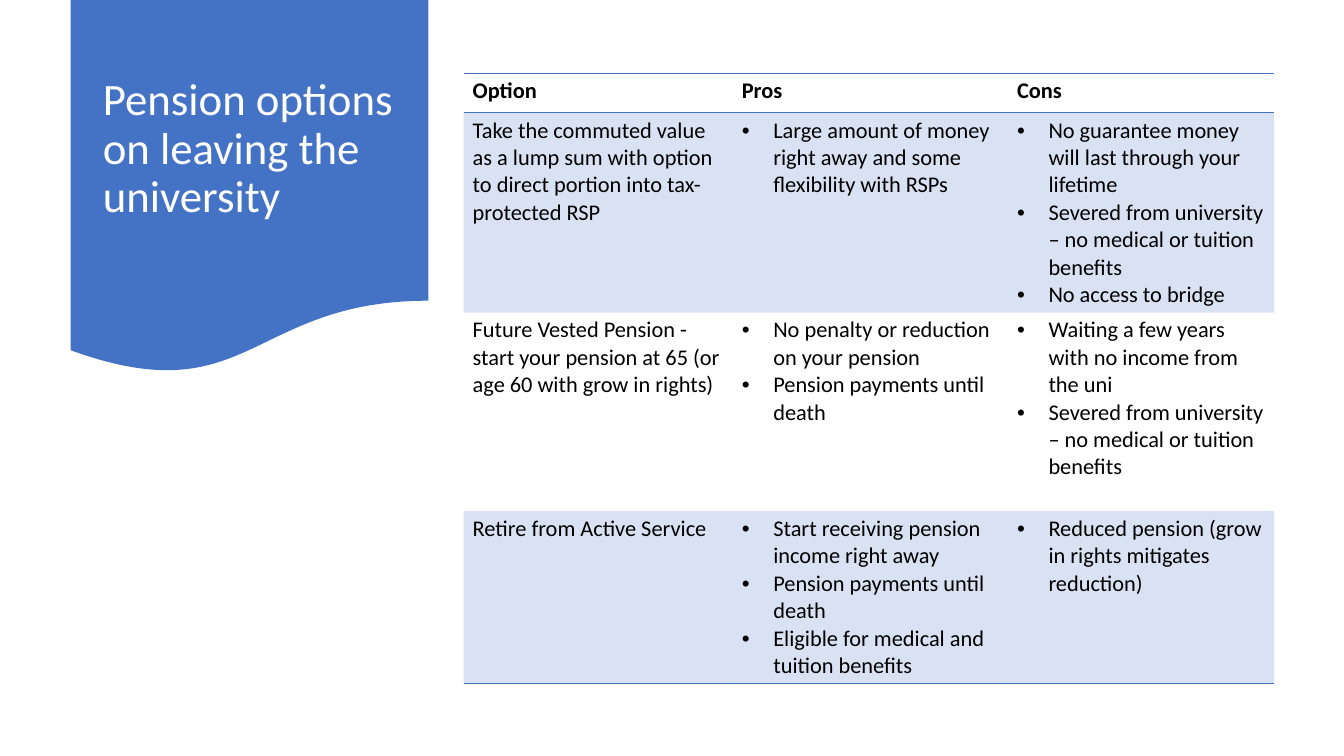
"""Build the slide on pension options when leaving the university."""
from lxml import etree
from pptx import Presentation
from pptx.dml.color import RGBColor
from pptx.enum.shapes import MSO_SHAPE
from pptx.enum.text import MSO_ANCHOR, MSO_AUTO_SIZE, PP_ALIGN
from pptx.oxml.ns import qn
from pptx.util import Emu, Inches, Pt

BANNER = MSO_SHAPE.FLOWCHART_DOCUMENT
MIDDLE, LEFT = MSO_ANCHOR.MIDDLE, PP_ALIGN.LEFT
NO_FIT = MSO_AUTO_SIZE.NONE
BLUE, WHITE, BLACK = "4472C4", "FFFFFF", "000000"
FONT = "Calibri"
PLAIN_TABLE = "{2D5ABB26-0587-4C30-8999-92F81FD0307C}"
COLUMN_WIDTHS = [2.67, 2.73, 2.64]
ROW_HEIGHTS = [0.39, 1.97, 1.97, 1.71]
CELL_MARGINS = {"margin_left": 0.09, "margin_right": 0.09, "margin_top": 0.04, "margin_bottom": 0.04}
BULLET_INDENT = Emu(285750)
RULED_SIDES = {0: ["lnT", "lnB"], 3: ["lnB"]}
SEVERED = "Severed from university – no medical or tuition benefits"
UNTIL_DEATH = "Pension payments until death"
OPTIONS = [
    (["Option"], ["Pros"], ["Cons"]),
    (["Take the commuted value as a lump sum with option to direct portion into tax-protected RSP"],
     ["Large amount of money right away and some flexibility with RSPs"],
     ["No guarantee money will last through your lifetime", SEVERED, "No access to bridge"]),
    (["Future Vested Pension - start your pension at 65 (or age 60 with grow in rights)"],
     ["No penalty or reduction on your pension", UNTIL_DEATH],
     ["Waiting a few years with no income from the uni", SEVERED]),
    (["Retire from Active Service"],
     ["Start receiving pension income right away", UNTIL_DEATH,
      "Eligible for medical and tuition benefits"],
     ["Reduced pension (grow in rights mitigates reduction)"]),
]


def color(hex_value):
    return RGBColor.from_string(hex_value)


def write(paragraph, text, size, hex_value, bold=False):
    run = paragraph.add_run()
    run.text = text
    run.font.color.rgb = color(hex_value)
    for name, value in {"name": FONT, "size": Pt(size), "bold": bold}.items():
        setattr(run.font, name, value)


prs = Presentation()
prs.slide_width, prs.slide_height = Inches(13.333), Inches(7.5)
slide = prs.slides.add_slide(prs.slide_layouts[5])

banner = slide.shapes.add_shape(BANNER, Inches(0.7), 0, Inches(3.55), Inches(3.72))
banner.shadow.inherit = False
banner.fill.solid()
banner.fill.fore_color.rgb = color(BLUE)
banner.line.fill.background()

title = slide.shapes.title
title.left, title.top = Inches(0.92), Inches(0.19)
title.width, title.height = Inches(3.11), Inches(2.59)
frame = title.text_frame
for name, value in {"word_wrap": True, "auto_size": NO_FIT, "vertical_anchor": MIDDLE}.items():
    setattr(frame, name, value)
heading = frame.paragraphs[0]
heading.alignment, heading.line_spacing = LEFT, 0.9
write(heading, "Pension options on leaving the university", 32, WHITE)
banner.element.addnext(title.element)

table_frame = slide.shapes.add_table(
    len(ROW_HEIGHTS), len(COLUMN_WIDTHS), Inches(4.6), Inches(0.73),
    Inches(sum(COLUMN_WIDTHS)), Inches(sum(ROW_HEIGHTS)))
options = table_frame.table
options.first_row = options.horz_banding = False
options._tbl.tblPr.find(qn("a:tableStyleId")).text = PLAIN_TABLE
for column, width in zip(options.columns, COLUMN_WIDTHS):
    column.width = Inches(width)
for row, height in zip(options.rows, ROW_HEIGHTS):
    row.height = Inches(height)

for r, entries in enumerate(OPTIONS):
    for c, points in enumerate(entries):
        cell = options.cell(r, c)
        for name, value in CELL_MARGINS.items():
            setattr(cell, name, Inches(value))
        cell_format = cell._tc.get_or_add_tcPr()
        for side in RULED_SIDES.get(r, []):
            rule = etree.SubElement(cell_format, qn(f"a:{side}"), w=str(Pt(1)))
            rule_fill = etree.SubElement(rule, qn("a:solidFill"))
            etree.SubElement(rule_fill, qn("a:srgbClr"), val=BLUE)
        if r % 2:
            cell.fill.solid()
            cell.fill.fore_color.rgb = color(BLUE)
            tint = cell_format.find(qn("a:solidFill")).find(qn("a:srgbClr"))
            etree.SubElement(tint, qn("a:alpha"), val="20000")
        else:
            cell.fill.background()
        for i, point in enumerate(points):
            body = cell.text_frame
            paragraph = body.paragraphs[0] if i == 0 else body.add_paragraph()
            write(paragraph, point, 16, BLACK, bold=r == 0)
            if r and c:
                bullet_format = paragraph._p.get_or_add_pPr()
                bullet_format.set("marL", str(BULLET_INDENT))
                bullet_format.set("indent", str(-BULLET_INDENT))
                etree.SubElement(bullet_format, qn("a:buFont"), typeface="Arial")
                etree.SubElement(bullet_format, qn("a:buChar"), char="•")

prs.save("out.pptx")
